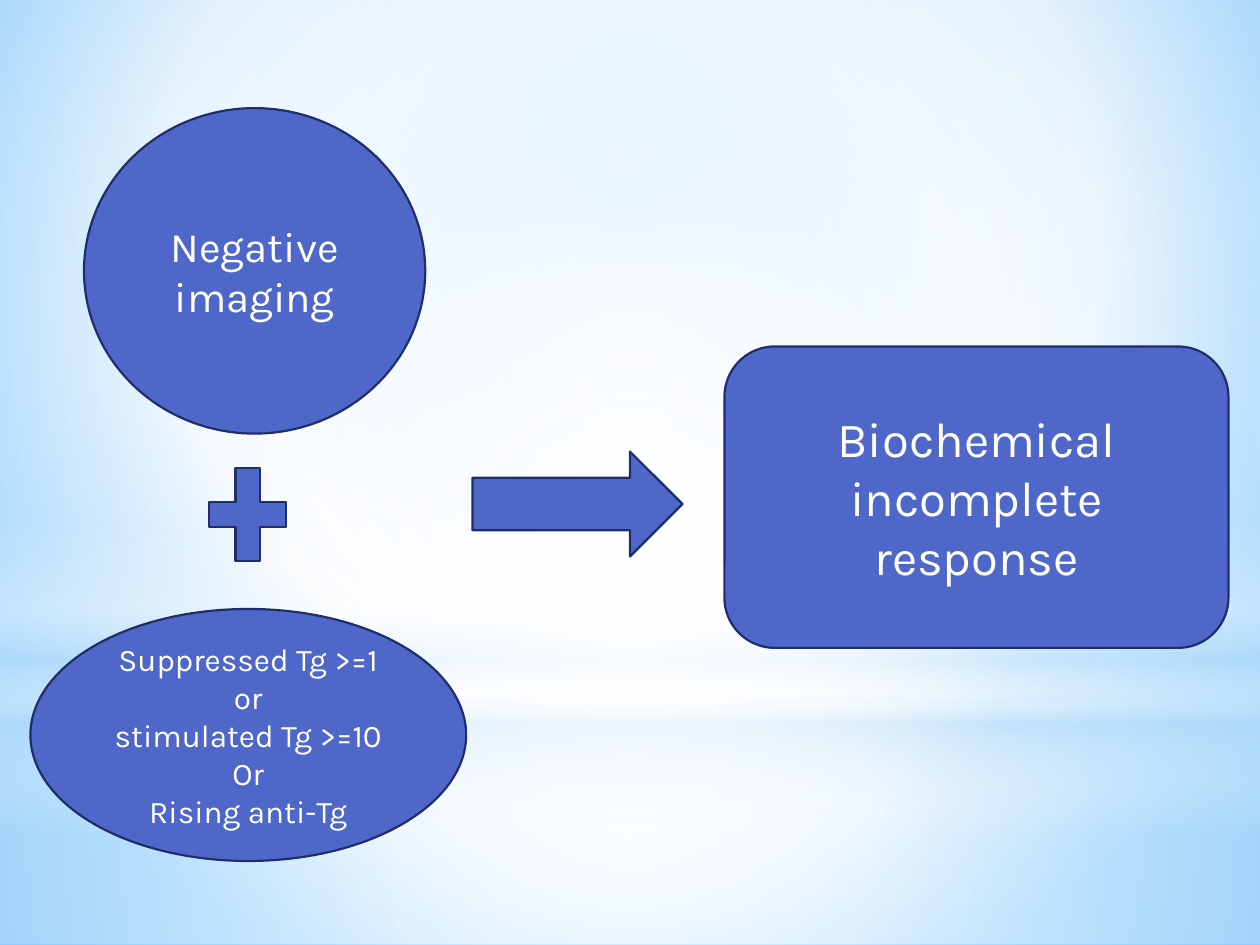
import pptx
import pptx.util
import pptx.dml.color
import pptx.enum.shapes
import pptx.enum.text
import pptx.oxml
import pptx.oxml.ns
from dataclasses import dataclass

SHAPE = pptx.enum.shapes.MSO_SHAPE
COLUMNS, ROWS = 120, 90
CELL = pptx.util.Inches(10) // COLUMNS


@dataclass(frozen=True)
class Theme:
    font: str = "Karla"
    fill: str = "4E67C8"
    outline: str = "1F2E69"
    text: str = "FFFFFF"
    white: str = "FFFFFF"
    haze: str = "B4DCFA"
    sky: str = "9ED5FF"
    deep_sky: str = "5BB9FF"
    outline_width: float = 1.25
    small: int = 18
    medium: int = 24
    large: int = 28


THEME = Theme()
CENTRE = (50, 50, 50, 50)


def rgb(value):
    return pptx.dml.color.RGBColor.from_string(value)


def set_gradient(fill, owner, stops, focus=None):
    """Stops are (position, colour, opacity) in percent; without a focus it runs downwards."""
    fill.gradient()
    gradient = next(owner.iter(pptx.oxml.ns.qn("a:gradFill")))
    stop_xml = "".join(
        f'<a:gs pos="{position * 1000}"><a:srgbClr val="{colour}">'
        f'<a:alpha val="{opacity * 1000}"/></a:srgbClr></a:gs>'
        for position, colour, opacity in stops
    )
    if focus:
        sides = " ".join(f'{side}="{share * 1000}"' for side, share in zip("ltrb", focus))
        direction = f'<a:path path="circle"><a:fillToRect {sides}/></a:path>'
    else:
        direction = '<a:lin ang="5400000" scaled="0"/>'
    source = pptx.oxml.parse_xml(
        f'<a:gradFill {pptx.oxml.ns.nsdecls("a")}>'
        f"<a:gsLst>{stop_xml}</a:gsLst>{direction}</a:gradFill>"
    )
    gradient[:] = list(source)


def add_preset(slide, preset, box):
    """Place a preset shape in a box of (column, row, columns, rows)."""
    shape = slide.shapes.add_shape(preset, *(round(cells * CELL) for cells in box))
    shape.shadow.inherit = False
    return shape


def add_glow(slide, preset, box, stops, focus=CENTRE):
    glow = add_preset(slide, preset, box)
    set_gradient(glow.fill, glow.element, stops, focus)
    glow.line.fill.background()


def add_node(slide, preset, box, lines=(), size=THEME.medium):
    node = add_preset(slide, preset, box)
    node.fill.solid()
    node.fill.fore_color.rgb = rgb(THEME.fill)
    node.line.color.rgb = rgb(THEME.outline)
    node.line.width = pptx.util.Pt(THEME.outline_width)
    if not lines:
        return
    frame = node.text_frame
    frame.word_wrap = True
    frame.vertical_anchor = pptx.enum.text.MSO_ANCHOR.MIDDLE
    frame.text = "\n".join(lines)
    for paragraph in frame.paragraphs:
        paragraph.alignment = pptx.enum.text.PP_ALIGN.CENTER
        paragraph._p.get_or_add_pPr().set("rtl", "1")
        for run in paragraph.runs:
            run.font.name = THEME.font
            run.font.size = pptx.util.Pt(size)
            run.font.color.rgb = rgb(THEME.text)


def build_backdrop(slide, box):
    left, top, width, height = box
    white, haze = THEME.white, THEME.haze
    horizon = 67
    set_gradient(slide.background.fill, slide.element,
                 [(0, THEME.sky, 100), (60, white, 100), (100, THEME.deep_sky, 100)],
                 (20, 10, 20, 60))
    # Floor and sky
    add_glow(slide, SHAPE.RECTANGLE, (left, top + horizon, width, height - horizon),
             [(0, white, 91), (37, white, 76), (100, haze, 79)])
    add_glow(slide, SHAPE.RECTANGLE, (left, top, width, horizon),
             [(0, white, 89), (48, white, 62), (100, haze, 79)])
    # Horizon bands
    add_glow(slide, SHAPE.RECTANGLE, (left, top + 49.4, width, 30),
             [(0, white, 0), (29, white, 30), (45, haze, 40),
              (55, white, 26), (65, haze, 60), (100, white, 0)], focus=None)
    # Central light
    add_glow(slide, SHAPE.OVAL, (left, top + 21, width, horizon),
             [(0, white, 100), (56, white, 0)])


def build_criteria(slide, box):
    left, top, width, height = box
    # Imaging
    add_node(slide, SHAPE.OVAL, (left + 5.1, top, 32.5, 31), ["Negative imaging"])
    # Plus sign
    add_node(slide, SHAPE.MATH_PLUS, (left + 15.7, top + 32.7, 10, 12))
    # Thyroglobulin levels
    add_node(slide, SHAPE.OVAL, (left, top + height - 24, width, 24),
             ["Suppressed Tg >=1", "or", "stimulated Tg >=10", "Or", "Rising anti-Tg"],
             THEME.small)


def build_outcome(slide, box):
    left, top, width, height = box
    # Arrow
    add_node(slide, SHAPE.RIGHT_ARROW, (left, top + 10, 20, 10))
    # Response
    add_node(slide, SHAPE.ROUNDED_RECTANGLE, (left + 24, top, width - 24, height),
             ["Biochemical incomplete", "response"], THEME.large)


def main():
    deck = pptx.Presentation()
    deck.slide_width, deck.slide_height = COLUMNS * CELL, ROWS * CELL
    slide = deck.slides.add_slide(deck.slide_layouts[6])
    build_backdrop(slide, (0, 0, COLUMNS, ROWS))
    build_criteria(slide, (2.9, 10.3, 41.5, 71.7))
    build_outcome(slide, (45, 33, 72, 28.7))
    deck.save("out.pptx")


if __name__ == "__main__":
    main()
